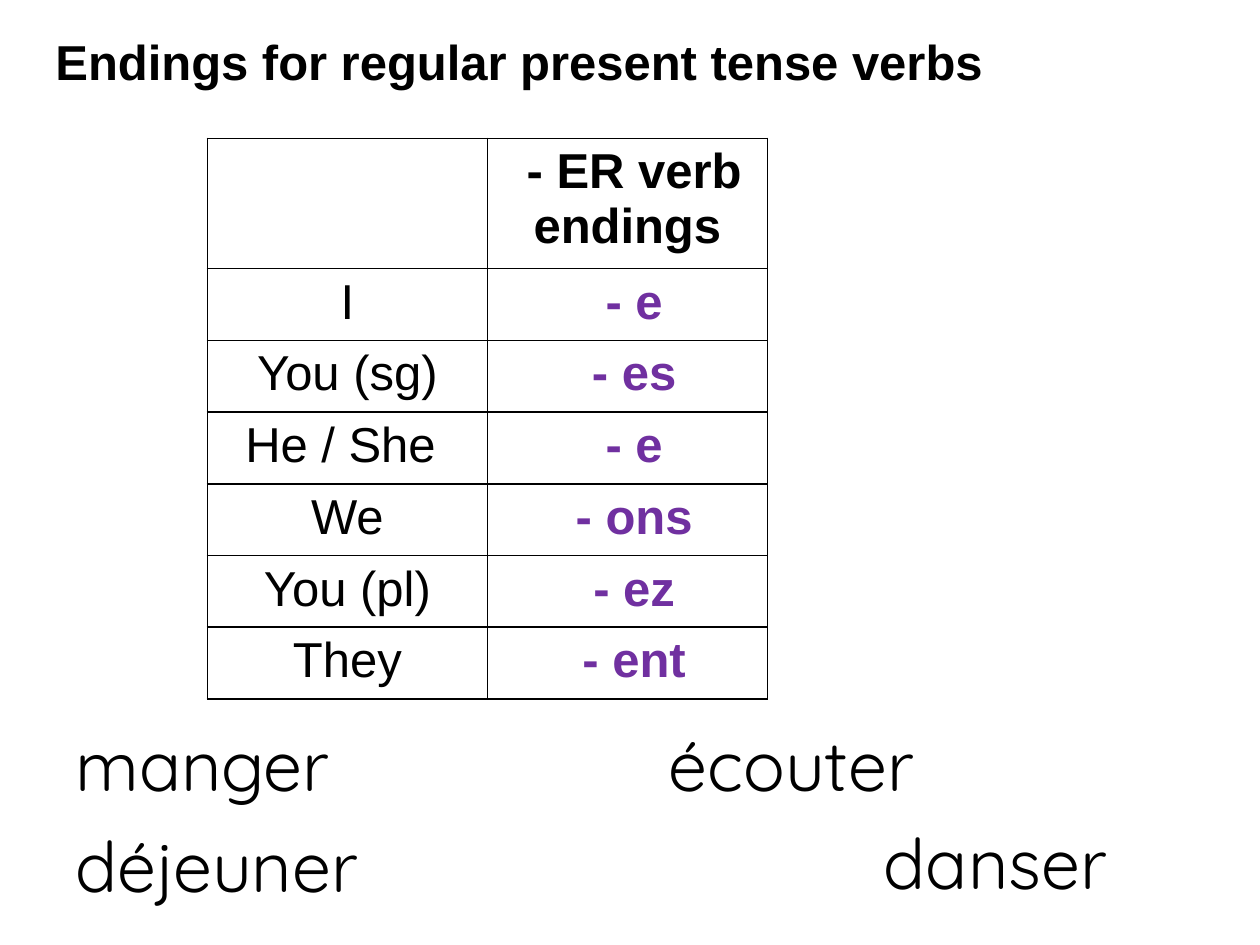
from lxml.etree import SubElement
from pptx import Presentation
from pptx.dml.color import RGBColor
from pptx.enum.text import MSO_ANCHOR, PP_ALIGN
from pptx.oxml.ns import qn
from pptx.util import Pt

BLACK = "000000"
PURPLE = "7030A0"
ROWS = [
    ("", " - ER verb endings"),
    ("I", " - e"),
    ("You (sg)", " - es"),
    ("He / She ", " - e"),
    ("We", " - ons"),
    ("You (pl)", " - ez"),
    ("They", " - ent"),
]
VERBS = [
    ("manger", 36, 409, 244),
    ("déjeuner", 36, 466.5, 236),
    ("écouter", 375, 409, 247),
    ("danser", 498, 464.5, 161),
]


def rgb(color):
    return RGBColor.from_string(color)


def write(tf, text, font, size, color=BLACK, bold=False, align=PP_ALIGN.LEFT):
    p = tf.paragraphs[0]
    p.text = text
    p.alignment = align
    for r in p.runs:
        r.font.name = font
        r.font.size = Pt(size)
        r.font.bold = bold
        r.font.color.rgb = rgb(color)


def add_title(s, text):
    sp = s.shapes.title
    sp.left, sp.top, sp.width, sp.height = Pt(24.5), Pt(14.5), Pt(634), Pt(41)
    tf = sp.text_frame
    tf.word_wrap = True
    tf.vertical_anchor = MSO_ANCHOR.TOP
    write(tf, text, "Arial", 28, bold=True)


def add_verb(s, text, left, top, width):
    sp = s.shapes.add_textbox(Pt(left), Pt(top), Pt(width), Pt(55.5))
    sp.text_frame.word_wrap = True
    write(sp.text_frame, text, "Quicksand", 40)


def add_borders(cell):
    tcPr = cell._tc.get_or_add_tcPr()
    for side in ("a:lnL", "a:lnR", "a:lnT", "a:lnB"):
        ln = SubElement(tcPr, qn(side), w=str(Pt(1)))
        fill = SubElement(ln, qn("a:solidFill"))
        SubElement(fill, qn("a:srgbClr"), val=BLACK)


def add_endings_table(s):
    gf = s.shapes.add_table(len(ROWS), 2, Pt(118.5), Pt(79), Pt(320), Pt(319))
    table = gf.table
    table.first_row = False
    table.horz_banding = False
    for i, texts in enumerate(ROWS):
        table.rows[i].height = Pt(41 if i else 74)
        for j, text in enumerate(texts):
            cell = table.cell(i, j)
            add_borders(cell)
            cell.fill.background()
            if text:
                color = PURPLE if i and j else BLACK
                write(cell.text_frame, text, "Arial", 28, color, j == 1, PP_ALIGN.CENTER)


def main():
    prs = Presentation()
    prs.slide_width, prs.slide_height = Pt(720), Pt(540)
    s = prs.slides.add_slide(prs.slide_layouts[5])
    add_title(s, "Endings for regular present tense verbs")
    for verb in VERBS:
        add_verb(s, *verb)
    add_endings_table(s)
    prs.save("out.pptx")


if __name__ == "__main__":
    main()
